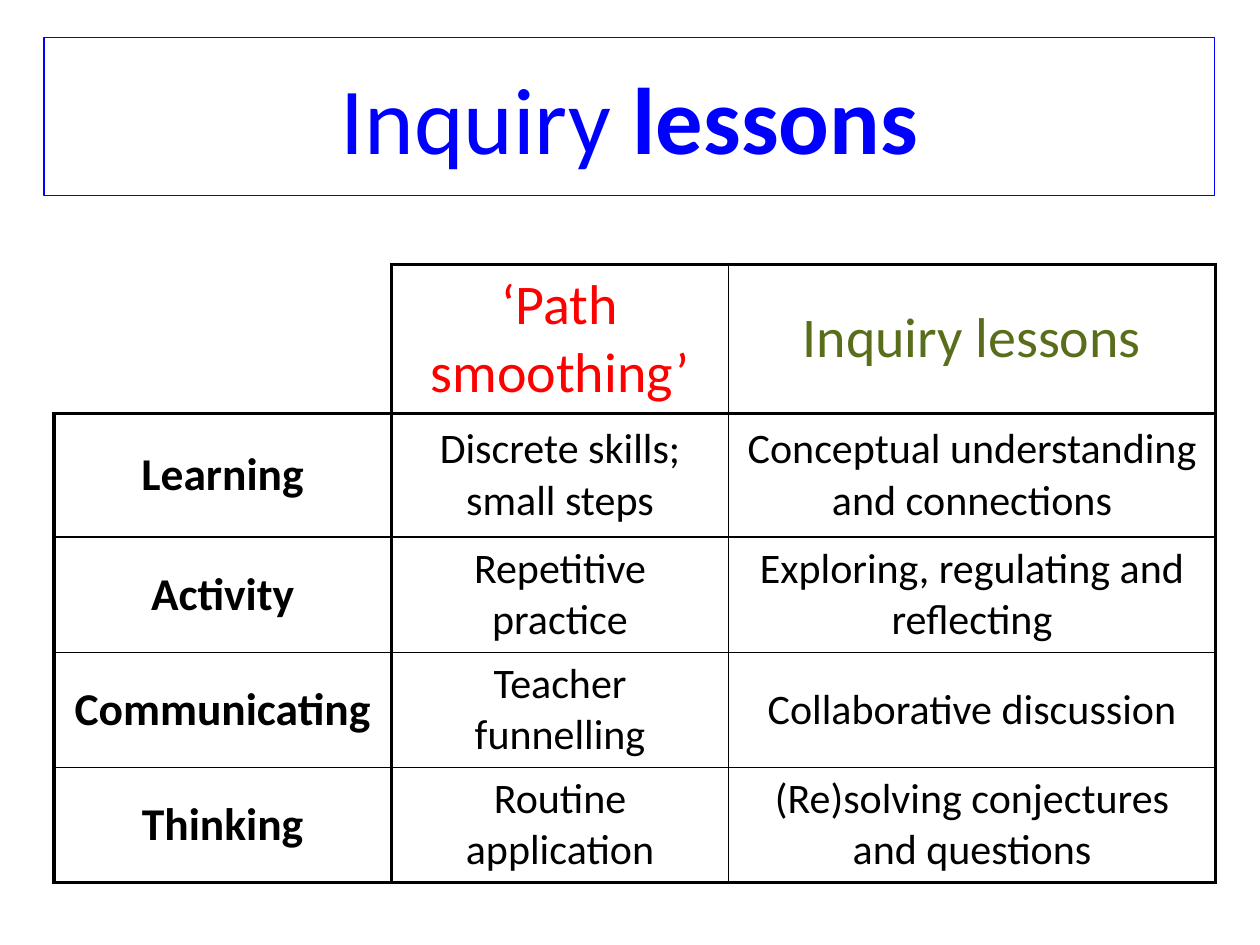
from lxml.etree import SubElement
from pptx import Presentation
from pptx.dml.color import RGBColor
from pptx.enum.text import MSO_ANCHOR as Anchor, PP_ALIGN as Align
from pptx.oxml.ns import qn
from pptx.util import Cm, Pt

COLORS = {
    "white": "FFFFFF",
    "black": "000000",
    "blue": "0000FF",
    "red": "FF0000",
    "olive": "586E1A",
}
FONT = "Calibri"
THICK, THIN = 2.25, 1


def style_span(span, size, color, bold=False):
    span.font.name = FONT
    span.font.size = Pt(size)
    span.font.bold = bold
    span.font.color.rgb = RGBColor.from_string(COLORS[color])


def add_border(cell, side, width):
    """Draw one cell edge; a width of 0 leaves it open."""
    line = SubElement(cell._tc.get_or_add_tcPr(), qn(f"a:ln{side}"), w=str(Pt(width)))
    if width:
        fill = SubElement(line, qn("a:solidFill"))
        SubElement(fill, qn("a:srgbClr"), val=COLORS["black"])
    else:
        SubElement(line, qn("a:noFill"))


deck = Presentation()
deck.slide_width, deck.slide_height = Cm(25.4), Cm(19.05)
page = deck.slides.add_slide(deck.slide_layouts[6])

# Title in a blue frame
title = page.shapes.add_textbox(Cm(0.89), Cm(0.76), Cm(23.6), Cm(3.18))
title.line.color.rgb = RGBColor.from_string(COLORS["blue"])
title.line.width = Pt(0.75)
title.text_frame.word_wrap = True
title.text_frame.vertical_anchor = Anchor.MIDDLE
para = title.text_frame.paragraphs[0]
para.alignment = Align.CENTER
for words, bold in (("Inquiry ", False), ("lessons", True)):
    span = para.add_run()
    span.text = words
    style_span(span, 54, "blue", bold)

# Comparison table
rows = [
    ("", "‘Path smoothing’", "Inquiry lessons"),
    ("Learning", "Discrete skills; small steps", "Conceptual understanding and connections"),
    ("Activity", "Repetitive practice", "Exploring, regulating and reflecting"),
    ("Communicating", "Teacher funnelling", "Collaborative discussion"),
    ("Thinking", "Routine application", "(Re)solving conjectures and questions"),
]
widths = [6.8, 6.8, 9.81]
heights = [3, 2.5, 2.32, 2.32, 2.32]
header_colors = ["black", "red", "olive"]

table = page.shapes.add_table(len(rows), len(widths), Cm(1.09), Cm(5.33),
                              Cm(sum(widths)), Cm(sum(heights))).table
table.first_row = table.horz_banding = False
for column, width in zip(table.columns, widths):
    column.width = Cm(width)
for row, height in zip(table.rows, heights):
    row.height = Cm(height)

# Heavy lines frame the table and set off the header row and label column
row_edges = [THICK, THICK, THIN, THIN, THIN, THICK]
column_edges = [THICK, THICK, THIN, THICK]

for r, texts in enumerate(rows):
    for c, text in enumerate(texts):
        cell = table.cell(r, c)
        corner = r == 0 and c == 0
        add_border(cell, "L", 0 if corner else column_edges[c])
        add_border(cell, "R", column_edges[c + 1])
        add_border(cell, "T", 0 if corner else row_edges[r])
        add_border(cell, "B", row_edges[r + 1])
        cell.fill.solid()
        cell.fill.fore_color.rgb = RGBColor.from_string(COLORS["white"])
        if corner:
            continue
        cell.vertical_anchor = Anchor.MIDDLE
        cell.text_frame.text = text
        para = cell.text_frame.paragraphs[0]
        para.alignment = Align.CENTER
        para.space_before = para.space_after = Pt(12)
        span = para.runs[0]
        if r == 0:
            style_span(span, 32, header_colors[c])
        elif c == 0:
            style_span(span, 26, "black", True)
        else:
            style_span(span, 24, "black")

deck.save("out.pptx")
